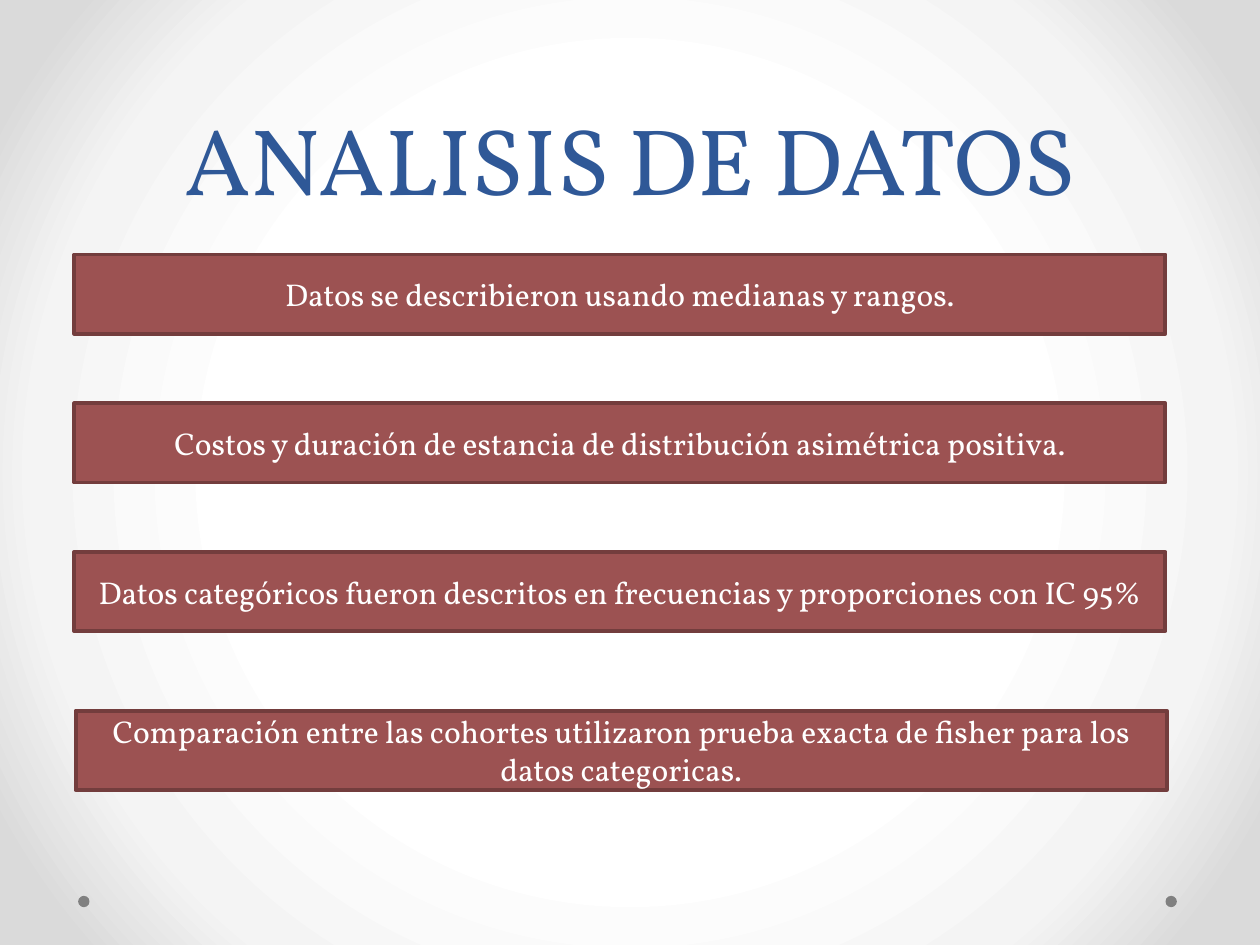
from pptx import Presentation
from pptx.dml.color import RGBColor
from pptx.enum.shapes import MSO_SHAPE as Shape
from pptx.enum.text import MSO_ANCHOR as Anchor, PP_ALIGN as Align
from pptx.oxml import parse_xml
from pptx.oxml.ns import nsdecls, qn
from pptx.util import Inches, Pt

COLUMNS, ROWS = 100, 75
CELL = Inches(0.1)
FONT = "Vollkorn"
STATEMENTS = [
    "Datos se describieron usando medianas y rangos.",
    "Costos y duración de estancia de distribución asimétrica positiva.",
    "Datos categóricos fueron descritos en frecuencias y proporciones con IC 95%",
    "Comparación entre las cohortes utilizaron prueba exacta de fisher para los datos categoricas.",
]


def cells(*counts):
    return [round(count * CELL) for count in counts]


def color(value):
    return RGBColor.from_string(value)


def add_text(frame, words, size, ink, anchor):
    frame.word_wrap = True
    frame.vertical_anchor = anchor
    line = frame.paragraphs[0]
    line.alignment = Align.CENTER
    run = line.add_run()
    run.text = words
    run.font.name = FONT
    run.font.size = Pt(size)
    run.font.color.rgb = color(ink)
    return line


def add_block(slide, kind, box, fill):
    block = slide.shapes.add_shape(kind, *cells(*box))
    block.shadow.inherit = False
    block.fill.solid()
    block.fill.fore_color.rgb = color(fill)
    return block


def paint_backdrop(slide, stops):
    slide.background.fill.gradient()
    default = next(slide.element.iter(qn("a:gradFill")))
    glow = "".join(
        f'<a:gs pos="{share * 1000}"><a:srgbClr val="{tone}"/></a:gs>'
        for share, tone in stops
    )
    radial = parse_xml(
        f'<a:gradFill {nsdecls("a")} rotWithShape="1"><a:gsLst>{glow}</a:gsLst>'
        '<a:path path="circle"><a:fillToRect l="50000" t="50000" r="50000" b="50000"/>'
        "</a:path></a:gradFill>"
    )
    default.getparent().replace(default, radial)


def place_footer_dots(slide, box):
    left, top, width, size = box
    for column in (left, left + width - size):
        dot = add_block(slide, Shape.OVAL, (column, top, size, size), "808080")
        dot.line.fill.background()


def place_title(slide, box):
    title = slide.shapes.title
    title.left, title.top, title.width, title.height = cells(*box)
    heading = add_text(title.text_frame, "ANALISIS DE DATOS", 54, "2F5897", Anchor.BOTTOM)
    heading.line_spacing = Pt(58)


def place_statements(slide, box, bar_height, pitch, last_shift):
    left, top, width, height = box
    tops = [top + pitch * row for row in range(len(STATEMENTS) - 1)]
    spots = [(left, row) for row in tops]
    spots.append((left + last_shift, top + height - bar_height))
    for (column, row), words in zip(spots, STATEMENTS):
        bar = add_block(slide, Shape.RECTANGLE, (column, row, width, bar_height), "9C5252")
        bar.line.color.rgb = color("733D3D")
        bar.line.width = Pt(2.25)
        add_text(bar.text_frame, words, 18, "FFFFFF", Anchor.MIDDLE)


def main():
    deck = Presentation()
    deck.slide_width, deck.slide_height = cells(COLUMNS, ROWS)
    slide = deck.slides.add_slide(deck.slide_layouts[5])
    paint_backdrop(slide, [(50, "FFFFFF"), (76, "F4F4F4"), (92, "DADADA")])
    place_footer_dots(slide, (6.2, 71.1, 87.2, 0.9))
    place_title(slide, (5, 0, 90, 17.5))
    place_statements(slide, (5.9, 20.2, 86.6, 42.5), 6.3, 11.8, 0.1)
    deck.save("out.pptx")


if __name__ == "__main__":
    main()
